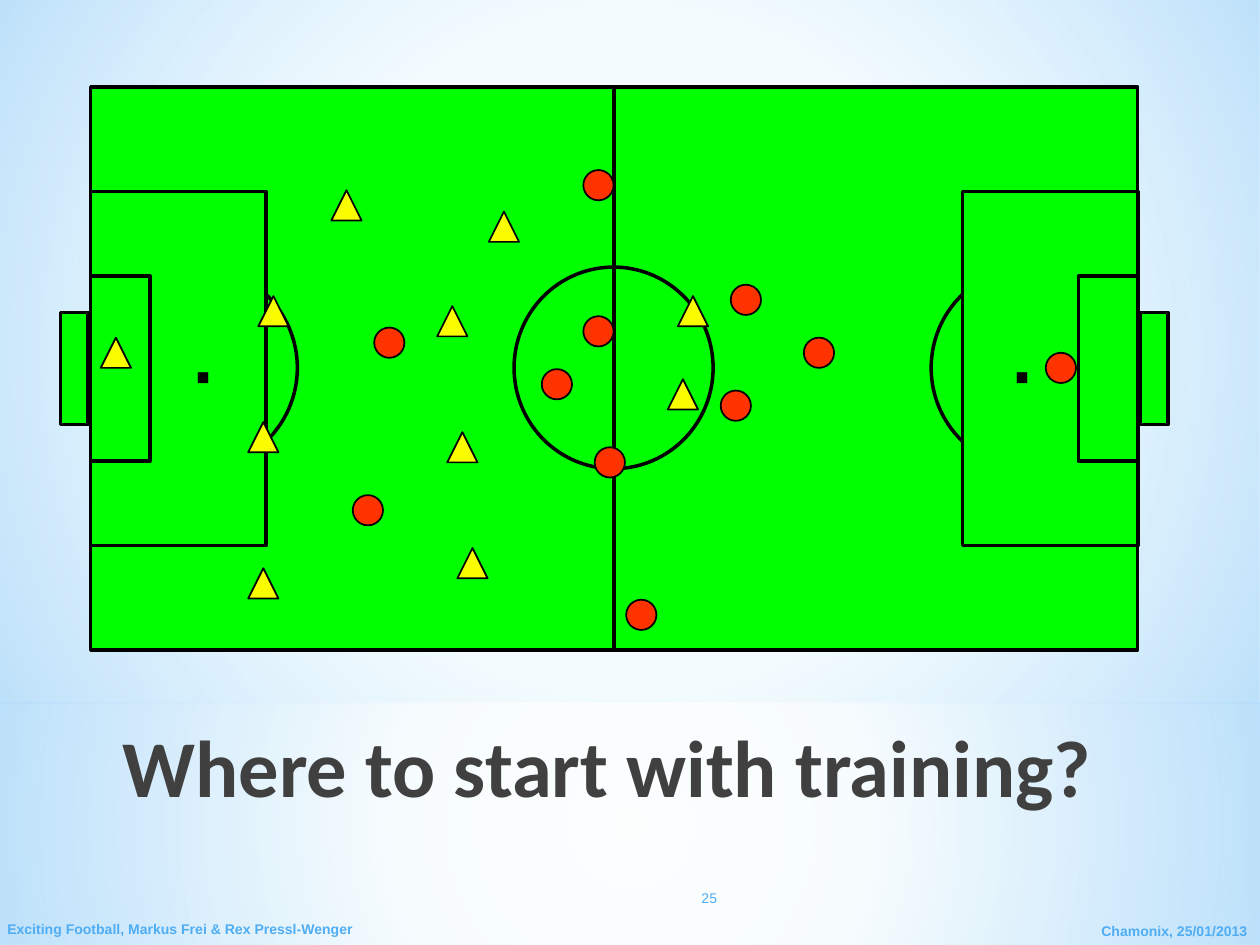
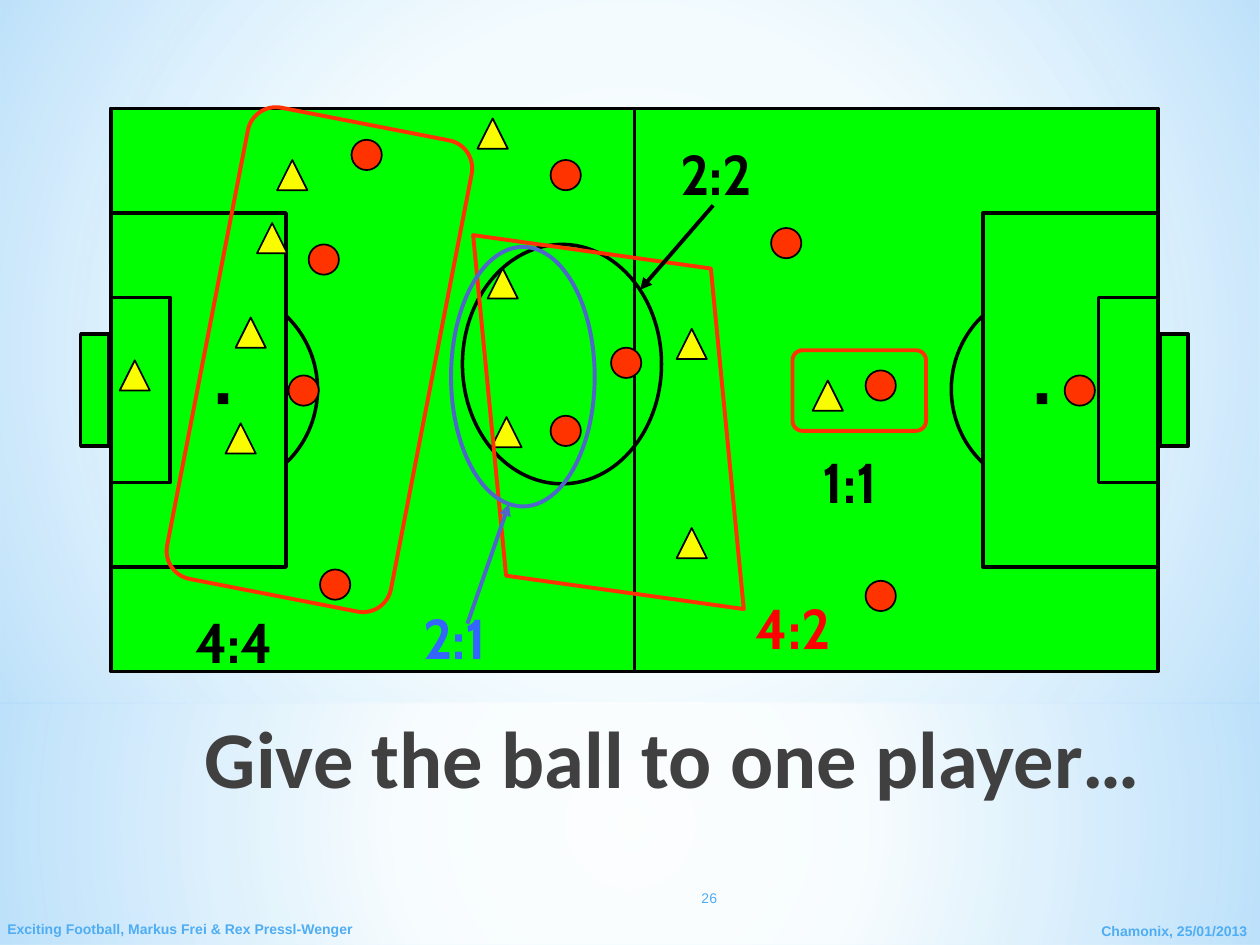
"""Build two football training slides: players on a pitch, then the game situations marked."""
from dataclasses import dataclass
from typing import NamedTuple, Optional

from lxml.etree import SubElement
from pptx import Presentation
from pptx.dml.color import RGBColor
from pptx.enum.shapes import MSO_CONNECTOR as Link, MSO_SHAPE as Preset
from pptx.enum.text import MSO_ANCHOR as Anchor, MSO_AUTO_SIZE as AutoSize, PP_ALIGN as Align
from pptx.oxml import parse_xml
from pptx.oxml.ns import nsdecls, qn
from pptx.util import Cm, Pt

BLACK, GRASS, YELLOW, RED = "000000", "00FF00", "FAFD00", "FF3300"
INDIGO, TITLE_GREY, FOOTER_BLUE, SKY = "4E67C8", "404040", "4FADF3", "DFF5FD"
PITCH_LINE, PLAYER_LINE, ZONE_LINE = 2, 1, 2.25
PLAYER_SIZE = 0.24
PITCH_WIDTH, PITCH_HEIGHT = 8.31, 4.47


class Point(NamedTuple):
    left: float
    top: float


class Box(NamedTuple):
    left: float
    top: float
    width: float
    height: float

    def moved(self, origin: Point) -> "Box":
        return Box(self.left + origin.left, self.top + origin.top, self.width, self.height)


@dataclass
class Label:
    text: str
    box: Box
    size: float
    color: str = BLACK
    font: str = "Cabin"
    bold: bool = True
    align: Align = Align.LEFT
    anchor: Anchor = Anchor.TOP


@dataclass
class Zone:
    preset: Preset
    box: Box
    color: str = RED
    rotation: float = 0
    adjustment: Optional[float] = None
    flipped: bool = False


@dataclass
class Arrow:
    start: Point
    end: Point
    color: str


@dataclass
class Scene:
    title: str
    title_box: Box
    number: int
    pitch: Point
    centre_circle: Box
    triangles: list[Point]
    circles: list[Point]


def length(inches: float) -> Cm:
    return Cm(inches * 2.54)


def place(box: Box) -> list[Cm]:
    return [length(side) for side in box]


def rgb(color: str) -> RGBColor:
    return RGBColor.from_string(color)


def add_outline(slide, preset: Preset, box: Box, width: float,
                line: str = BLACK, fill: Optional[str] = None):
    shape = slide.shapes.add_shape(preset, *place(box))
    shape.shadow.inherit = False
    shape.line.color.rgb = rgb(line)
    shape.line.width = Pt(width)
    if fill:
        shape.fill.solid()
        shape.fill.fore_color.rgb = rgb(fill)
    else:
        shape.fill.background()
    return shape


def add_line(slide, start: Point, end: Point, color: str, width: float):
    line = slide.shapes.add_connector(Link.STRAIGHT, *place(Box(*start, *end)))
    line.line.color.rgb = rgb(color)
    line.line.width = Pt(width)
    SubElement(line.element.spPr, qn("a:effectLst"))
    return line


def add_arrow(slide, arrow: Arrow) -> None:
    line = add_line(slide, arrow.start, arrow.end, arrow.color, ZONE_LINE)
    SubElement(line.element.spPr.find(qn("a:ln")), qn("a:tailEnd"), type="triangle")


def write(frame, label: Label) -> None:
    frame.word_wrap = True
    frame.auto_size = AutoSize.NONE
    frame.vertical_anchor = label.anchor
    frame.text = label.text
    paragraph = frame.paragraphs[0]
    paragraph.alignment = label.align
    for run in paragraph.runs:
        run.font.name = label.font
        run.font.size = Pt(label.size)
        run.font.bold = label.bold
        run.font.color.rgb = rgb(label.color)


def add_label(slide, label: Label) -> None:
    write(slide.shapes.add_textbox(*place(label.box)).text_frame, label)


def add_zone(slide, zone: Zone) -> None:
    shape = add_outline(slide, zone.preset, zone.box, ZONE_LINE, zone.color)
    shape.rotation = zone.rotation
    if zone.adjustment is not None:
        shape.adjustments[0] = zone.adjustment
    if zone.flipped:
        shape.element.spPr.find(qn("a:xfrm")).set("flipH", "1")


def add_band(master, slide, box: Box, stops: list[tuple[int, str, int]]) -> None:
    """Put a radially shaded band on the master, behind everything else."""
    band = slide.shapes.add_shape(Preset.RECTANGLE, *place(box))
    band.shadow.inherit = False
    band.line.fill.background()
    band.fill.background()
    stops_xml = "".join(
        f'<a:gs pos="{position * 1000}"><a:srgbClr val="{color}">'
        f'<a:alpha val="{opacity * 1000}"/></a:srgbClr></a:gs>'
        for position, color, opacity in stops)
    gradient = parse_xml(
        f'<a:gradFill {nsdecls("a")} rotWithShape="1"><a:gsLst>{stops_xml}</a:gsLst>'
        '<a:path path="circle"><a:fillToRect l="50000" t="50000" r="50000" b="50000"/>'
        '</a:path></a:gradFill>')
    properties = band.element.spPr
    properties.replace(properties.find(qn("a:noFill")), gradient)
    master.shapes.element.insert(2, band.element)


def add_pitch(slide, scene: Scene) -> None:
    def mark(preset: Preset, box: Box, fill: Optional[str] = GRASS):
        return add_outline(slide, preset, box.moved(scene.pitch), PITCH_LINE, fill=fill)

    def mark_both_ends(box: Box, preset: Preset = Preset.RECTANGLE,
                       fill: Optional[str] = GRASS) -> None:
        mark(preset, box, fill)
        mark(preset, box._replace(left=PITCH_WIDTH - box.left - box.width), fill)

    field = mark(Preset.RECTANGLE, Box(0, 0, PITCH_WIDTH, PITCH_HEIGHT))
    mark_both_ends(Box(0.06, 1.43, 1.58, 1.6), Preset.OVAL, None)
    mark_both_ends(Box(0, 0.83, 1.39, 2.81))
    mark(Preset.OVAL, scene.centre_circle)
    mark_both_ends(Box(-0.24, 1.79, 0.22, 0.89))
    halfway = add_line(slide, scene.pitch, scene.pitch, BLACK, PITCH_LINE)
    halfway.begin_connect(field, 0)
    halfway.end_connect(field, 2)
    mark_both_ends(Box(0, 1.5, 0.47, 1.47))
    for spot_left in (0.72, 7.22):
        spot = Box(spot_left, 1.78, 0.43, 0.9).moved(scene.pitch)
        add_label(slide, Label("·", spot, 48, bold=False))


def add_players(slide, preset: Preset, color: str, positions: list[Point]) -> None:
    for position in positions:
        add_outline(slide, preset, Box(*position, PLAYER_SIZE, PLAYER_SIZE),
                    PLAYER_LINE, fill=color)


def add_footers(slide, number: int) -> None:
    style = dict(size=8, color=FOOTER_BLUE, font="Arial", anchor=Anchor.MIDDLE)
    add_label(slide, Label("Chamonix, 25/01/2013", Box(7.99, 7.29, 2.01, 0.2),
                           align=Align.RIGHT, **style))
    add_label(slide, Label("Exciting Football, Markus Frei & Rex Pressl-Wenger",
                           Box(-0.04, 7.27, 3.67, 0.2), **style))
    add_label(slide, Label(str(number), Box(3.79, 6.93, 2, 0.4), bold=False,
                           align=Align.RIGHT, **style))


def add_scene(presentation, scene: Scene):
    slide = presentation.slides.add_slide(presentation.slide_layouts[5])
    title = slide.shapes.title
    title.left, title.top, title.width, title.height = place(scene.title_box)
    write(title.text_frame, Label(scene.title, scene.title_box, 46, TITLE_GREY,
                                  "Calibri", align=Align.RIGHT))
    add_pitch(slide, scene)
    add_players(slide, Preset.ISOSCELES_TRIANGLE, YELLOW, scene.triangles)
    add_players(slide, Preset.OVAL, RED, scene.circles)
    add_footers(slide, scene.number)
    return slide


START = Scene(
    "Where to start with training?", Box(0.72, 5.64, 8.04, 1.25), 25,
    Point(0.72, 0.69), Box(3.36, 1.43, 1.58, 1.6),
    triangles=[Point(2.63, 1.51), Point(2.05, 2.35), Point(1.97, 3.35), Point(1.97, 4.51),
               Point(0.8, 2.68), Point(5.38, 2.35), Point(3.47, 2.43), Point(5.3, 3.01),
               Point(3.55, 3.43), Point(3.63, 4.35), Point(3.88, 1.68)],
    circles=[Point(4.63, 2.51), Point(2.8, 3.93), Point(2.97, 2.6), Point(4.72, 3.55),
             Point(8.3, 2.8), Point(5.72, 3.1), Point(4.97, 4.76), Point(4.63, 1.35),
             Point(4.3, 2.93), Point(6.38, 2.68), Point(5.8, 2.26)])

SITUATIONS = Scene(
    "Give the ball to one player…", Box(0.74, 5.57, 8.41, 1.25), 26,
    Point(0.88, 0.86), Box(2.79, 1.08, 1.58, 1.9),
    triangles=[Point(2.2, 1.27), Point(2.04, 1.77), Point(1.87, 2.52), Point(1.79, 3.36),
               Point(0.95, 2.86), Point(6.45, 3.02), Point(3.87, 2.13), Point(5.37, 2.61),
               Point(3.9, 3.31), Point(5.37, 4.19), Point(3.79, 0.94)],
    circles=[Point(2.79, 1.11), Point(2.54, 4.52), Point(2.45, 1.94), Point(2.29, 2.98),
             Point(8.45, 2.98), Point(6.87, 2.94), Point(6.12, 1.81), Point(4.85, 2.76),
             Point(4.37, 3.3), Point(6.87, 4.61), Point(4.37, 1.27)])

ZONES = [
    Zone(Preset.ROUNDED_RECTANGLE, Box(6.29, 2.78, 1.06, 0.64), adjustment=0.125),
    Zone(Preset.ROUNDED_RECTANGLE, Box(1.63, 0.95, 1.81, 3.81), rotation=11, adjustment=0.125),
    Zone(Preset.PARALLELOGRAM, Box(3.56, 2.03, 2.54, 2.64), rotation=8, adjustment=0.25,
         flipped=True),
    Zone(Preset.OVAL, Box(3.58, 1.96, 1.14, 2.06), INDIGO),
]

RATIOS = [
    Label("1:1", Box(6.43, 3.5, 0.79, 0.64), 32),
    Label("4:4", Box(1.45, 4.77, 0.99, 0.64), 32),
    Label("4:2", Box(5.9, 4.66, 0.89, 0.64), 32, "FF0000"),
    Label("2:1", Box(3.26, 4.74, 0.89, 0.64), 32, "3366FF"),
    Label("2:2", Box(5.3, 1.06, 0.99, 0.64), 32),
]

ARROWS = [
    Arrow(Point(5.66, 1.63), Point(5.08, 2.3), BLACK),
    Arrow(Point(3.71, 4.95), Point(4.04, 4), INDIGO),
]


def main() -> None:
    presentation = Presentation()
    presentation.slide_width, presentation.slide_height = length(10), length(7.5)
    master = presentation.slide_master
    master.background.fill.solid()
    master.background.fill.fore_color.rgb = rgb(SKY)

    start = add_scene(presentation, START)
    add_band(master, start, Box(0, 0, 10, 5.58),
             [(0, "FFFFFF", 89), (48, "FFFFFF", 62), (100, "B4DCFA", 79)])
    add_band(master, start, Box(0, 5.58, 10, 1.92),
             [(0, "FFFFFF", 91), (37, "FFFFFF", 76), (100, "B4DCFA", 79)])

    situations = add_scene(presentation, SITUATIONS)
    for zone in ZONES:
        add_zone(situations, zone)
    for ratio in RATIOS:
        add_label(situations, ratio)
    for arrow in ARROWS:
        add_arrow(situations, arrow)
    presentation.save("out.pptx")


if __name__ == "__main__":
    main()
